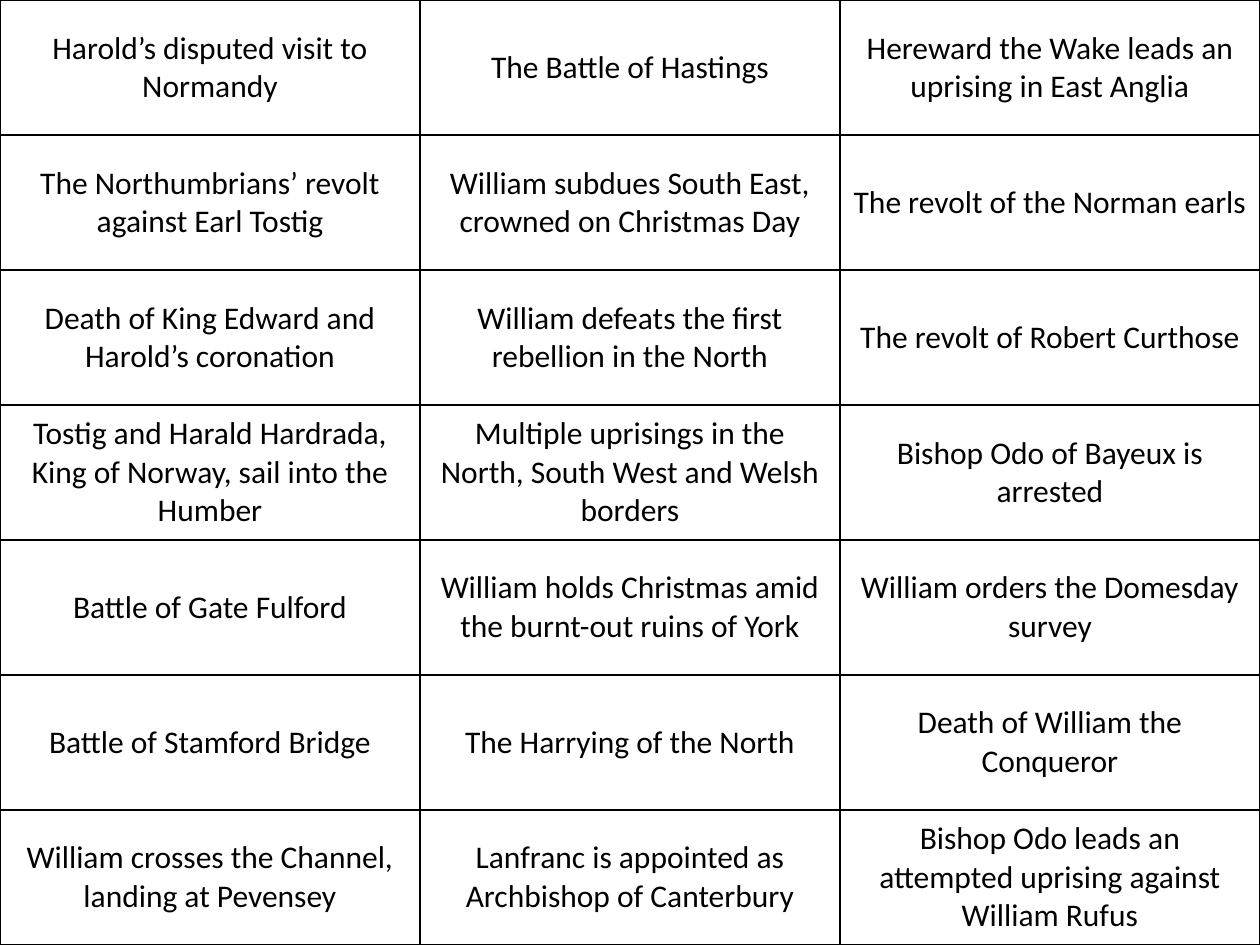
"""Build a slide of Norman Conquest event cards laid out in a full-page table."""

from dataclasses import dataclass

from lxml.etree import SubElement
from pptx import Presentation
from pptx.dml.color import RGBColor as RGB
from pptx.enum.text import MSO_ANCHOR as Anchor, PP_ALIGN as Align
from pptx.oxml.ns import qn
from pptx.table import _Cell as Cell
from pptx.util import Pt

COLORS = {"ink": "000000"}
WIDTH, HEIGHT = 720, 540
FONT, FONT_SIZE, BORDER = "Calibri", 18, 1


@dataclass
class EventRow:
    invasion: str
    conquest: str
    later_reign: str

    def events(self) -> tuple[str, str, str]:
        return self.invasion, self.conquest, self.later_reign


ROWS = [
    EventRow("Harold’s disputed visit to Normandy",
             "The Battle of Hastings",
             "Hereward the Wake leads an uprising in East Anglia"),
    EventRow("The Northumbrians’ revolt against Earl Tostig",
             "William subdues South East, crowned on Christmas Day",
             "The revolt of the Norman earls"),
    EventRow("Death of King Edward and Harold’s coronation",
             "William defeats the first rebellion in the North",
             "The revolt of Robert Curthose"),
    EventRow("Tostig and Harald Hardrada, King of Norway, sail into the Humber",
             "Multiple uprisings in the North, South West and Welsh borders",
             "Bishop Odo of Bayeux is arrested"),
    EventRow("Battle of Gate Fulford",
             "William holds Christmas amid the burnt-out ruins of York",
             "William orders the Domesday survey"),
    EventRow("Battle of Stamford Bridge",
             "The Harrying of the North",
             "Death of William the Conqueror"),
    EventRow("William crosses the Channel, landing at Pevensey",
             "Lanfranc is appointed as Archbishop of Canterbury",
             "Bishop Odo leads an attempted uprising against William Rufus"),
]


def add_borders(cell: Cell) -> None:
    tcPr = cell._tc.get_or_add_tcPr()
    for side in ("lnL", "lnR", "lnT", "lnB"):
        ln = SubElement(tcPr, qn(f"a:{side}"), w=str(Pt(BORDER)))
        fill = SubElement(ln, qn("a:solidFill"))
        SubElement(fill, qn("a:srgbClr"), val=COLORS["ink"])


def fill_cell(cell: Cell, event: str) -> None:
    add_borders(cell)
    cell.fill.background()
    cell.vertical_anchor = Anchor.MIDDLE
    cell.text = event
    p = cell.text_frame.paragraphs[0]
    p.alignment = Align.CENTER
    p.font.name = FONT
    p.font.size = Pt(FONT_SIZE)
    p.font.color.rgb = RGB.from_string(COLORS["ink"])


def main() -> None:
    prs = Presentation()
    prs.slide_width, prs.slide_height = Pt(WIDTH), Pt(HEIGHT)
    s = prs.slides.add_slide(prs.slide_layouts[6])
    table = s.shapes.add_table(len(ROWS), 3, Pt(0), Pt(0), Pt(WIDTH), Pt(HEIGHT)).table
    table.first_row = table.horz_banding = False
    for r, row in enumerate(ROWS):
        for c, event in enumerate(row.events()):
            fill_cell(table.cell(r, c), event)
    prs.save("out.pptx")


if __name__ == "__main__":
    main()
